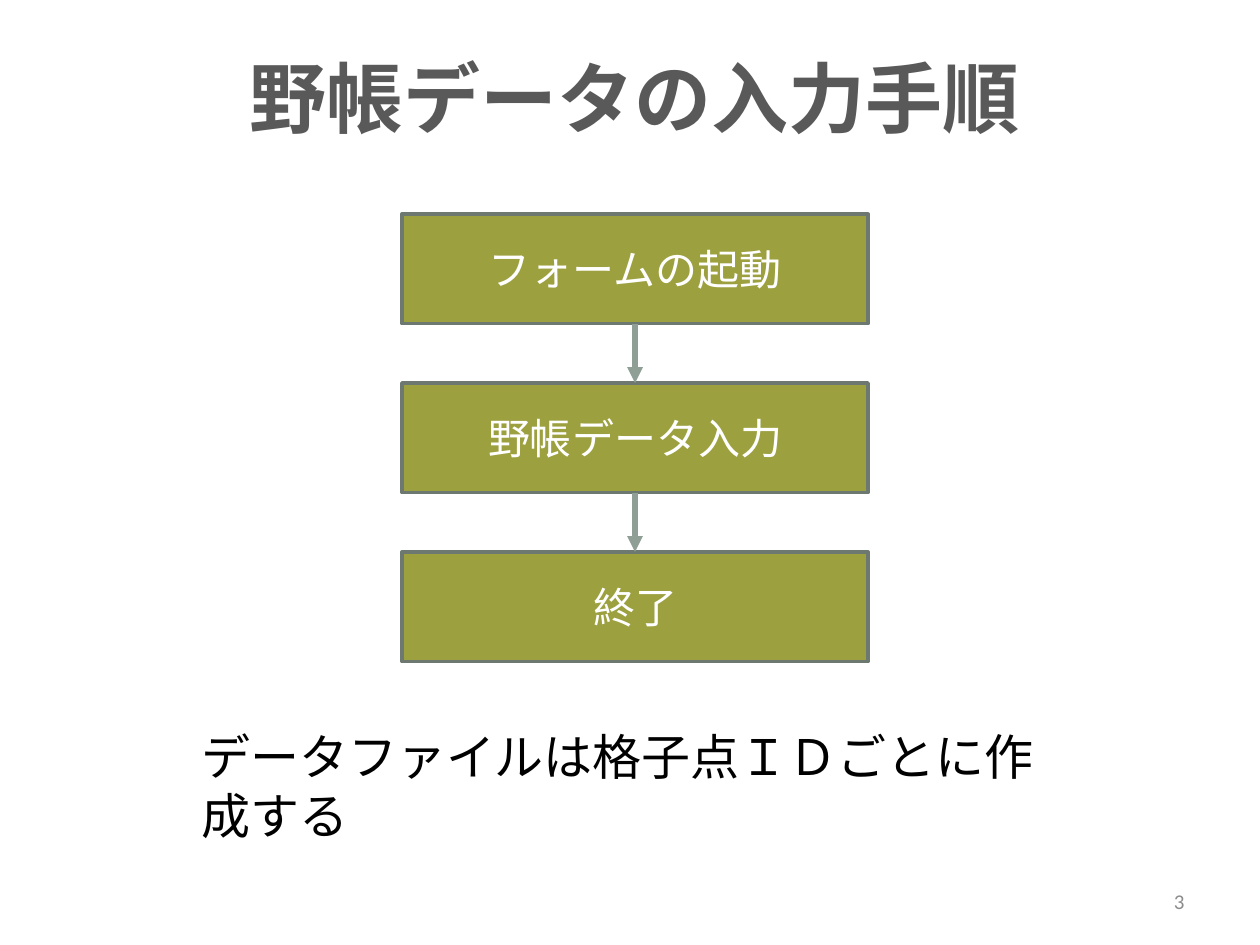
import pptx
import pptx.util
from lxml import etree
from pptx.dml.color import RGBColor
from pptx.enum.shapes import MSO_CONNECTOR, MSO_SHAPE
from pptx.enum.text import MSO_ANCHOR, MSO_AUTO_SIZE, PP_ALIGN
from pptx.oxml.ns import qn
from pptx.util import Inches, Pt

TITLE = "野帳データの入力手順"
STEPS = ["フォームの起動", "野帳データ入力", "終了"]
NOTE = "データファイルは格子点ＩＤごとに作成する"
PAGE = "3"

CJK, LATIN = "Noto Sans CJK JP", "Calibri"
TITLE_FORMAT = {"size": Pt(44), "name": CJK, "bold": True}
STEP_FORMAT = {"size": Pt(24), "name": CJK}
NOTE_FORMAT = {"size": Pt(28), "name": LATIN}
PAGE_FORMAT = {"size": Pt(12), "name": LATIN}

STEP_LEFT, STEP_TOP, STEP_W, STEP_H = 3.19, 1.7, 3.7, 0.87
STEP_PITCH = 1.34


def rgb(color):
    return RGBColor.from_string(color)


def write(sp, text, color, formats, align, anchor=MSO_ANCHOR.MIDDLE):
    tf = sp.text_frame
    tf.word_wrap = True
    tf.vertical_anchor = anchor
    p = tf.paragraphs[0]
    p.alignment = align
    r = p.add_run()
    r.text = text
    for key, value in formats.items():
        setattr(r.font, key, value)
    r.font.color.rgb = rgb(color)
    # Japanese characters take their typeface from the East Asian slot
    ea = etree.SubElement(r.font._element, qn("a:ea"))
    ea.set("typeface", CJK)


def add_step(s, text, top):
    sp = s.shapes.add_shape(MSO_SHAPE.RECTANGLE, Inches(STEP_LEFT), Inches(top),
                            Inches(STEP_W), Inches(STEP_H))
    sp.shadow.inherit = False
    sp.fill.solid()
    sp.fill.fore_color.rgb = rgb("9DA03F")
    sp.line.color.rgb = rgb("6D7871")
    sp.line.width = Pt(2)
    write(sp, text, "FFFFFF", STEP_FORMAT, PP_ALIGN.CENTER)
    return sp


def add_arrow(s, upper, lower):
    x = upper.left + upper.width // 2
    line = s.shapes.add_connector(MSO_CONNECTOR.STRAIGHT, x, upper.top + upper.height,
                                  x, lower.top)
    line.begin_connect(upper, 2)
    line.end_connect(lower, 0)
    line.line.color.rgb = rgb("8F9F96")
    line.line.width = Pt(3)
    etree.SubElement(line.line._get_or_add_ln(), qn("a:tailEnd")).set("type", "triangle")
    etree.SubElement(line._element.spPr, qn("a:effectLst"))


def add_text_box(s, left, top, width, height):
    return s.shapes.add_textbox(Inches(left), Inches(top), Inches(width), Inches(height))


def main():
    prs = pptx.Presentation()
    prs.slide_width, prs.slide_height = Inches(10), Inches(7.5)
    s = prs.slides.add_slide(prs.slide_layouts[5])

    title = s.shapes.title
    title.left, title.top = Inches(0.54), Inches(0.33)
    title.width, title.height = Inches(9), Inches(0.87)
    write(title, TITLE, "595959", TITLE_FORMAT, PP_ALIGN.CENTER)

    boxes = [add_step(s, text, STEP_TOP + i * STEP_PITCH) for i, text in enumerate(STEPS)]
    for upper, lower in zip(boxes, boxes[1:]):
        add_arrow(s, upper, lower)

    note = add_text_box(s, 1.5, 5.72, 7.09, 0.57)
    write(note, NOTE, "000000", NOTE_FORMAT, PP_ALIGN.LEFT, MSO_ANCHOR.TOP)
    note.text_frame.auto_size = MSO_AUTO_SIZE.SHAPE_TO_FIT_TEXT

    page = add_text_box(s, 7.17, 6.95, 2.33, 0.4)
    write(page, PAGE, "8C8C8C", PAGE_FORMAT, PP_ALIGN.RIGHT)

    prs.save("out.pptx")


if __name__ == "__main__":
    main()
